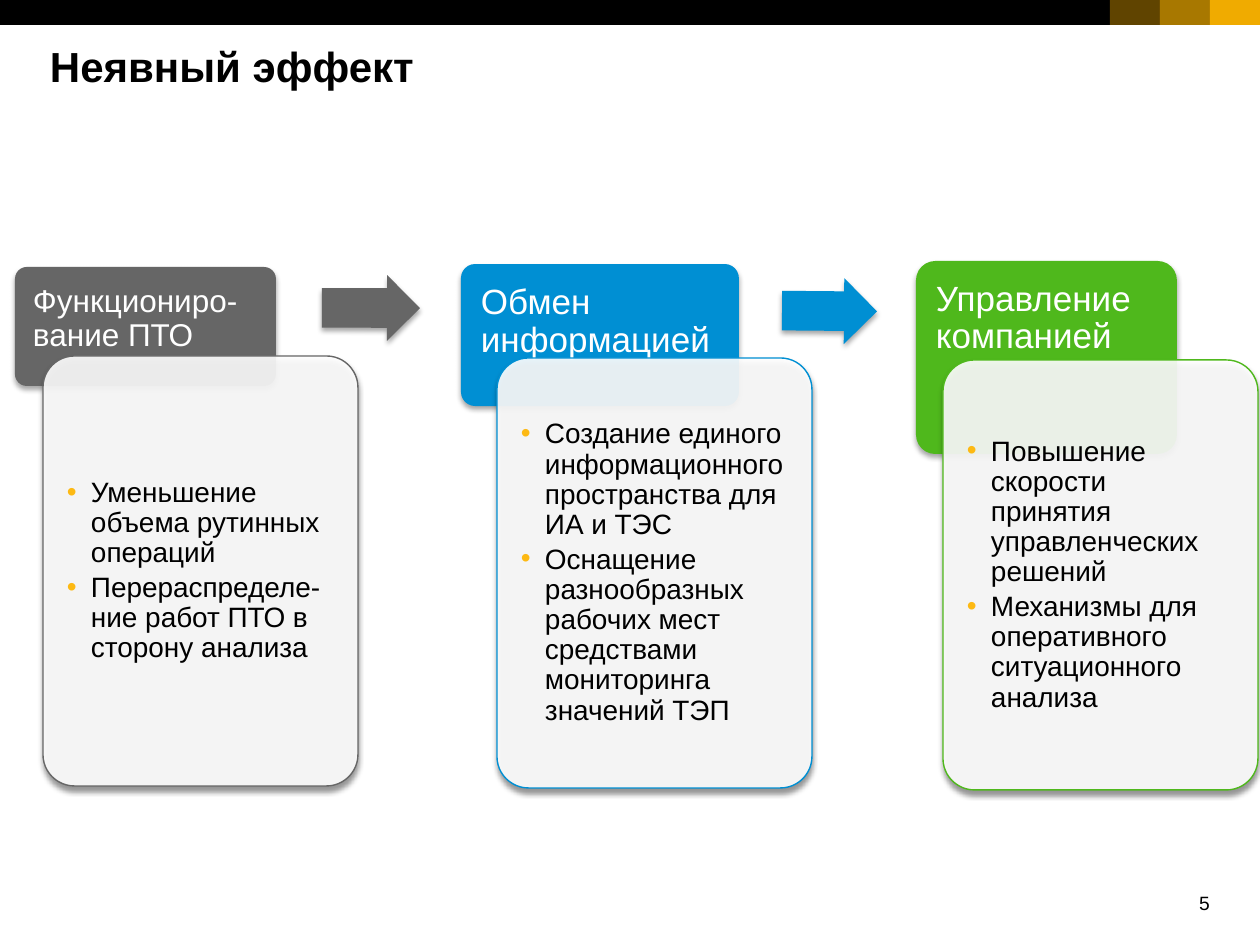
from collections import namedtuple
from dataclasses import dataclass

from lxml.etree import SubElement
from pptx import Presentation
from pptx.dml.color import RGBColor
from pptx.enum.shapes import MSO_SHAPE
from pptx.enum.text import MSO_ANCHOR, PP_ALIGN
from pptx.oxml.ns import qn
from pptx.util import Pt

EMU_PER_PX = 914400 / 126
Box = namedtuple("Box", "left top width height")
Stage = namedtuple("Stage", "heading size color inset header heading_height card points")
Arrow = namedtuple("Arrow", "box color rotation")


@dataclass(frozen=True)
class Theme:
    font: str = "Arial"
    black: str = "000000"
    white: str = "FFFFFF"
    gold: str = "F0AB00"
    bullet: str = "FDB913"
    gray: str = "666666"
    blue: str = "008FD3"
    green: str = "4FB81C"
    title: int = 24
    heading: int = 20
    small_heading: int = 18
    body: int = 16
    number: int = 11


THEME = Theme()
STAGES = [
    Stage("Функциониро-вание ПТО", THEME.small_heading, THEME.gray, 18,
          Box(15, 267, 261, 119), 79, Box(43, 356, 315, 430),
          ["Уменьшение объема рутинных операций",
           "Перераспределе-ние работ ПТО в сторону анализа"]),
    Stage("Обмен информацией", THEME.heading, THEME.blue, 20,
          Box(461, 264, 278, 142), 88, Box(497, 358, 315, 430),
          ["Создание единого информационного пространства для ИА и ТЭС",
           "Оснащение разнообразных рабочих мест средствами мониторинга значений ТЭП"]),
    Stage("Управление компанией", THEME.heading, THEME.green, 20,
          Box(916, 261, 261, 193), 102, Box(943, 360, 315, 430),
          ["Повышение скорости принятия управленческих решений",
           "Механизмы для оперативного ситуационного анализа"]),
]
ARROWS = [
    Arrow(Box(322, 275, 98, 66), THEME.gray, 0.2),
    Arrow(Box(782, 278, 95, 66), THEME.blue, 0.5),
]


def px(length):
    return round(length * EMU_PER_PX)


def add_shape(page, kind, box, color, opacity=100, line=None):
    shape = page.shapes.add_shape(kind, *map(px, box))
    shape.shadow.inherit = False
    shape.fill.solid()
    shape.fill.fore_color.rgb = RGBColor.from_string(color)
    if opacity < 100:
        fill_color = shape._element.spPr.find(".//" + qn("a:srgbClr"))
        SubElement(fill_color, qn("a:alpha"), val=str(opacity * 1000))
    if line:
        shape.line.color.rgb = RGBColor.from_string(line)
        shape.line.width = Pt(0.79)
    else:
        shape.line.fill.background()
    return shape


def add_shadow(shape, opacity, distance):
    effects = shape._element.spPr.find(qn("a:effectLst"))
    shadow = SubElement(effects, qn("a:outerShdw"), blurRad=str(Pt(3)),
                        dist=str(Pt(distance)), dir="5400000", rotWithShape="0")
    color = SubElement(shadow, qn("a:srgbClr"), val=THEME.black)
    SubElement(color, qn("a:alpha"), val=str(opacity * 1000))


def add_text_frame(page, box, insets=(0, 0, 0, 0)):
    """Add a wrapping text box; insets are left, top, right, bottom."""
    frame = page.shapes.add_textbox(*map(px, box)).text_frame
    frame.word_wrap = True
    (frame.margin_left, frame.margin_top,
     frame.margin_right, frame.margin_bottom) = map(px, insets)
    return frame


def add_span(para, text, size, color, bold=False):
    span = para.add_run()
    span.text = text
    span.font.name = THEME.font
    span.font.size = Pt(size)
    span.font.bold = bold
    span.font.color.rgb = RGBColor.from_string(color)


def add_bullet(para):
    props = para._p.get_or_add_pPr()
    props.set("marL", str(px(24)))
    props.set("indent", str(px(-24)))
    color = SubElement(props, qn("a:buClr"))
    SubElement(color, qn("a:srgbClr"), val=THEME.bullet)
    SubElement(props, qn("a:buFont"), typeface=THEME.font)
    SubElement(props, qn("a:buChar"), char="•")


def add_top_bar(page, box):
    add_shape(page, MSO_SHAPE.RECTANGLE, box, THEME.black)
    block = 50
    right = box.left + box.width
    for place, opacity in enumerate((100, 70, 40), start=1):
        add_shape(page, MSO_SHAPE.RECTANGLE,
                  Box(right - place * block, box.top, block, box.height),
                  THEME.gold, opacity)


def add_title(page, box):
    para = add_text_frame(page, box).paragraphs[0]
    add_span(para, "Неявный эффект", THEME.title, THEME.black, bold=True)


def add_page_number(page, box):
    para = add_text_frame(page, box).paragraphs[0]
    para.alignment = PP_ALIGN.RIGHT
    add_span(para, "5", THEME.number, THEME.black)


def add_header(page, box, stage):
    shape = add_shape(page, MSO_SHAPE.ROUNDED_RECTANGLE, box, stage.color)
    shape.adjustments[0] = 0.1
    add_shadow(shape, 35, 2)
    inset = stage.inset
    frame = add_text_frame(page, box._replace(height=stage.heading_height),
                           (inset, inset, inset, inset // 2))
    para = frame.paragraphs[0]
    para.line_spacing = 0.9
    add_span(para, stage.heading, stage.size, THEME.white)


def add_card(page, box, stage):
    shape = add_shape(page, MSO_SHAPE.ROUNDED_RECTANGLE, box, THEME.white, 90, stage.color)
    shape.adjustments[0] = 0.1
    add_shadow(shape, 45, 2.4)
    pad = 9
    inner = Box(box.left + pad, box.top + pad, box.width - 2 * pad, box.height - 2 * pad)
    frame = add_text_frame(page, inner, (15, 15, 15, 15))
    frame.vertical_anchor = MSO_ANCHOR.MIDDLE
    for index, point in enumerate(stage.points):
        para = frame.add_paragraph() if index else frame.paragraphs[0]
        para.level = 1
        para.line_spacing = 0.9
        para.space_after = Pt(2.5)
        add_bullet(para)
        add_span(para, point, THEME.body, THEME.black)


def add_arrow(page, arrow):
    shape = add_shape(page, MSO_SHAPE.RIGHT_ARROW, arrow.box, arrow.color)
    shape.adjustments[0] = 0.6
    shape.adjustments[1] = 0.5
    shape.rotation = arrow.rotation
    add_shadow(shape, 35, 2)


def main():
    deck = Presentation()
    deck.slide_width, deck.slide_height = px(1260), px(945)
    page = deck.slides.add_slide(deck.slide_layouts[6])
    add_page_number(page, Box(1174, 891, 36, 24))
    add_top_bar(page, Box(0, 0, 1260, 25))
    add_title(page, Box(50, 41, 1210, 50))
    for stage in STAGES:
        add_header(page, stage.header, stage)
        add_card(page, stage.card, stage)
    for arrow in ARROWS:
        add_arrow(page, arrow)
    deck.save("out.pptx")


if __name__ == "__main__":
    main()
